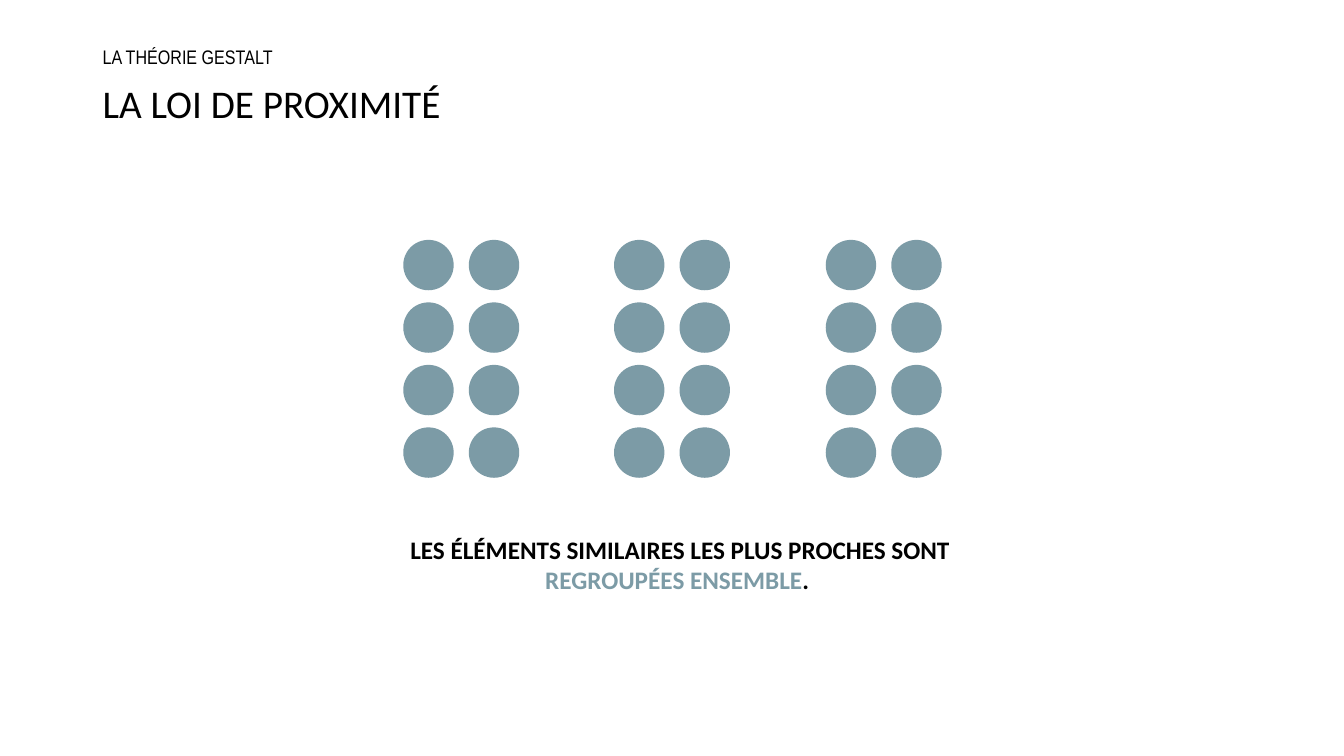
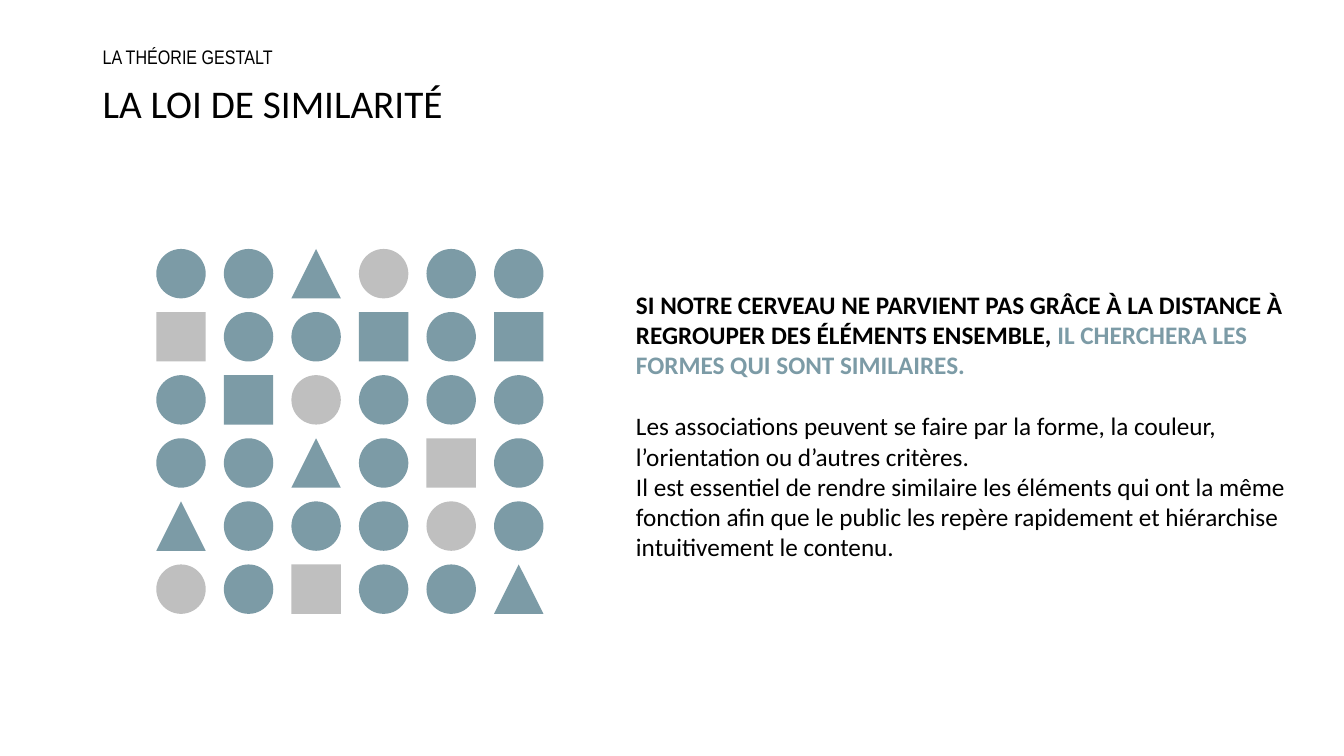
from dataclasses import dataclass

from pptx import Presentation
from pptx.dml.color import RGBColor
from pptx.enum.shapes import MSO_SHAPE
from pptx.enum.text import MSO_ANCHOR, PP_ALIGN
from pptx.util import Inches, Pt


@dataclass(frozen=True)
class Theme:
    ink: str = "000000"
    accent: str = "7C9BA6"
    muted: str = "BFBFBF"
    font: str = "Calibri"
    kicker_font: str = "Arial Narrow"
    title_size: int = 28
    kicker_size: int = 14
    body_size: int = 18


T = Theme()

# Content: a paragraph is a list of (text, colour, bold) runs
KICKER = "LA THÉORIE GESTALT"
PROXIMITY_TITLE = "LA LOI DE PROXIMITÉ"
PROXIMITY_TEXT = [
    [("LES ÉLÉMENTS SIMILAIRES LES PLUS PROCHES SONT ", T.ink, True),
     ("REGROUPÉES ENSEMBLE", T.accent, True),
     (". ", T.ink, True)],
]
SIMILARITY_TITLE = "LA LOI DE SIMILARITÉ"
SIMILARITY_TEXT = [
    [("SI NOTRE CERVEAU NE PARVIENT PAS GRÂCE À LA DISTANCE À REGROUPER "
      "DES ÉLÉMENTS ENSEMBLE, ", T.ink, True),
     ("IL CHERCHERA LES FORMES QUI SONT SIMILAIRES.", T.accent, True)],
    [("Les associations peuvent se faire par la forme, la couleur, "
      "l’orientation ou d’autres critères.", T.ink, False)],
    [("Il est essentiel de rendre similaire les éléments qui ont la même "
      "fonction afin que le public les repère rapidement et hiérarchise "
      "intuitivement le contenu.", T.ink, False)],
]

# Shape codes: circle, square, triangle; capitals are accent, small are muted
SHAPES = {"C": MSO_SHAPE.OVAL, "S": MSO_SHAPE.RECTANGLE,
          "T": MSO_SHAPE.ISOSCELES_TRIANGLE}
PAIR_GRID = ["CC"] * 4
MIXED_GRID = ["CCTcCC", "sCCSCS", "CScCCC", "CCTCsC", "TCCCcC", "cCsCCT"]


def add_text(slide, box, paragraphs, size=T.body_size, font=T.font,
             anchor=MSO_ANCHOR.TOP, align=PP_ALIGN.LEFT, spacing=1.0, gaps=()):
    """Text box; gaps maps paragraph index to space before in points."""
    tf = slide.shapes.add_textbox(*map(Inches, box)).text_frame
    tf.word_wrap = True
    tf.vertical_anchor = anchor
    gaps = dict(gaps)
    for i, runs in enumerate(paragraphs):
        p = tf.add_paragraph() if i else tf.paragraphs[0]
        p.alignment = align
        p.line_spacing = spacing
        p.space_before = Pt(gaps.get(i, 0))
        for text, color, bold in runs:
            r = p.add_run()
            r.text = text
            r.font.name = font
            r.font.size = Pt(size)
            r.font.bold = bold
            r.font.color.rgb = RGBColor.from_string(color)


def add_grid(slide, rows, left, top, right, bottom, size):
    """Group of shapes; right and bottom place the last column and row."""
    group = slide.shapes.add_group_shape()
    dx = (right - left) / (len(rows[0]) - 1)
    dy = (bottom - top) / (len(rows) - 1)
    for j, row in enumerate(rows):
        for i, code in enumerate(row):
            sp = group.shapes.add_shape(
                SHAPES[code.upper()], Inches(left + i * dx),
                Inches(top + j * dy), Inches(size), Inches(size))
            sp.shadow.inherit = False
            sp.fill.solid()
            sp.fill.fore_color.rgb = RGBColor.from_string(
                T.accent if code.isupper() else T.muted)
            sp.line.fill.background()


def add_slide(prs, title):
    """Blank slide with the shared heading."""
    s = prs.slides.add_slide(prs.slide_layouts[6])
    add_text(s, (0.92, 0.74, 11.5, 0.62), [[(title, T.ink, False)]],
             T.title_size, anchor=MSO_ANCHOR.MIDDLE, spacing=0.9)
    add_text(s, (0.92, 0.42, 11.5, 0.31), [[(KICKER, T.ink, False)]],
             T.kicker_size, T.kicker_font, MSO_ANCHOR.MIDDLE, spacing=0.9)
    return s


def proximity_slide(prs):
    s = add_slide(prs, PROXIMITY_TITLE)
    for left in (4, 6.09, 8.19):
        add_grid(s, PAIR_GRID, left, 2.38, left + 0.65, 4.24, 0.5)
    add_text(s, (3.41, 5.25, 6.67, 0.71), PROXIMITY_TEXT,
             align=PP_ALIGN.CENTER)


def similarity_slide(prs):
    s = add_slide(prs, SIMILARITY_TITLE)
    add_grid(s, MIXED_GRID, 1.55, 2.47, 4.9, 5.6, 0.49)
    add_text(s, (6.21, 2.82, 6.67, 2.83), SIMILARITY_TEXT, gaps={1: 22})


def main():
    prs = Presentation()
    prs.slide_width, prs.slide_height = Inches(13.33), Inches(7.5)
    proximity_slide(prs)
    similarity_slide(prs)
    prs.save("out.pptx")


if __name__ == "__main__":
    main()
